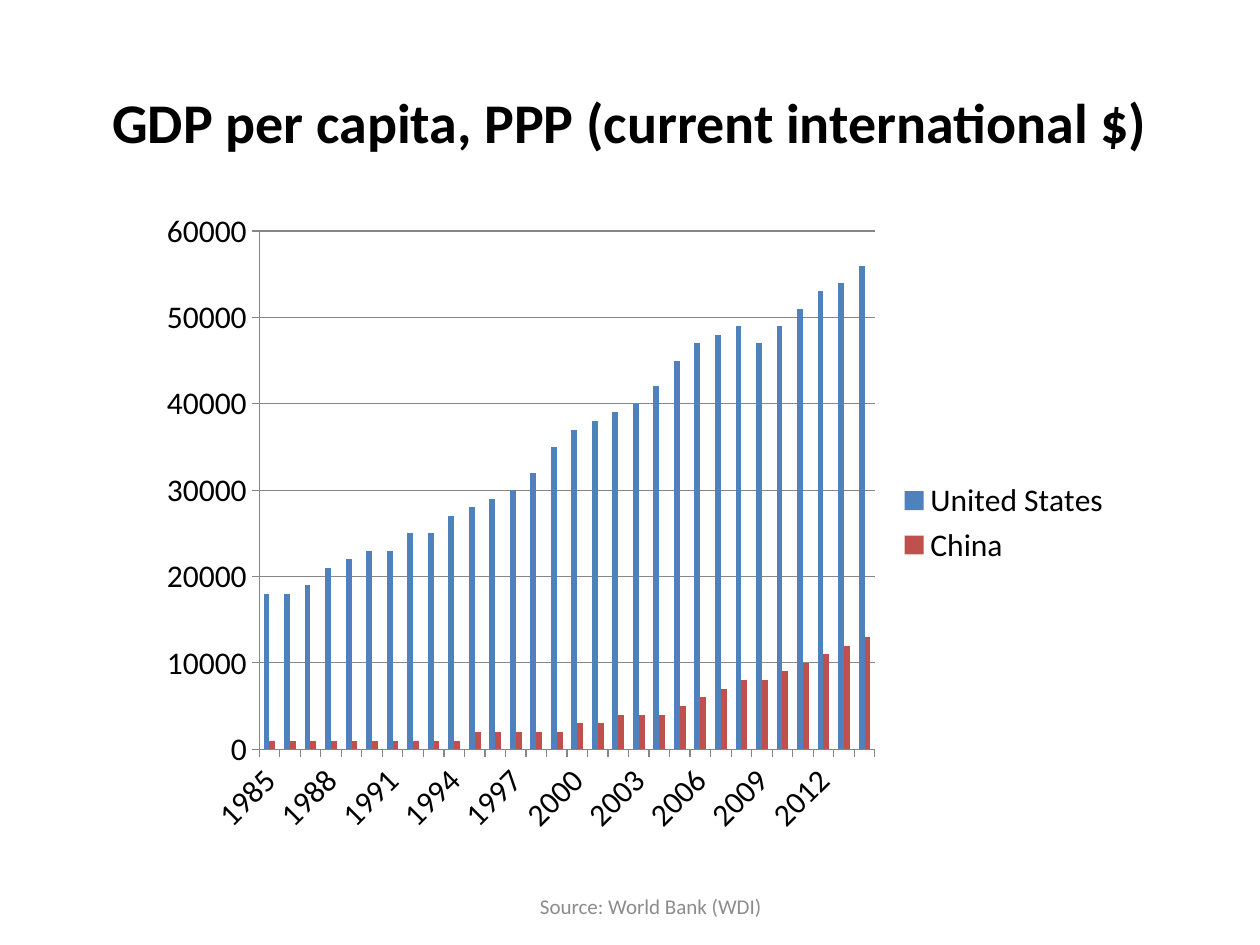
from pptx import Presentation
from pptx.chart.data import CategoryChartData
from pptx.dml.color import RGBColor
from pptx.enum.chart import XL_CHART_TYPE, XL_LEGEND_POSITION, XL_TICK_MARK
from pptx.enum.text import MSO_ANCHOR, PP_ALIGN
from pptx.util import Inches, Pt

COLUMNS = XL_CHART_TYPE.COLUMN_CLUSTERED
LEGEND_RIGHT = XL_LEGEND_POSITION.RIGHT
TICK_OUTSIDE = XL_TICK_MARK.OUTSIDE
CENTER = PP_ALIGN.CENTER
MIDDLE = MSO_ANCHOR.MIDDLE

FONT = "Calibri"
BLACK = "000000"
GRAY = "8C8C8C"
AXIS_GRAY = "868686"

TITLE = "GDP per capita, PPP (current international $)"
SOURCE = "Source: World Bank (WDI)"
YEARS = range(1985, 2015)
# Name, colour, GDP per capita in thousands of dollars
SERIES = [
    ("United States", "4F81BD",
     [18, 18, 19, 21, 22, 23, 23, 25, 25, 27, 28, 29, 30, 32, 35,
      37, 38, 39, 40, 42, 45, 47, 48, 49, 47, 49, 51, 53, 54, 56]),
    ("China", "C0504D",
     [1, 1, 1, 1, 1, 1, 1, 1, 1, 1, 2, 2, 2, 2, 2,
      3, 3, 4, 4, 4, 5, 6, 7, 8, 8, 9, 10, 11, 12, 13]),
]


def color(hex_string):
    return RGBColor.from_string(hex_string)


def set_font(font, size, hex_color, bold=False):
    font.name = FONT
    font.size = Pt(size)
    font.bold = bold
    font.color.rgb = color(hex_color)


def add_text(slide, text, box, *, size, hex_color, bold=False):
    shape = slide.shapes.add_textbox(*map(Inches, box))
    frame = shape.text_frame
    frame.word_wrap = True
    frame.vertical_anchor = MIDDLE
    paragraph = frame.paragraphs[0]
    paragraph.alignment = CENTER
    run = paragraph.add_run()
    run.text = text
    set_font(run.font, size, hex_color, bold)


def style_axis(axis):
    axis.major_tick_mark = TICK_OUTSIDE
    axis.format.line.color.rgb = color(AXIS_GRAY)
    axis.format.line.width = Pt(0.75)


def add_gdp_chart(slide, box):
    data = CategoryChartData(number_format="General")
    data.categories = [str(year) for year in YEARS]
    for name, _, thousands in SERIES:
        data.add_series(name, [value * 1000 for value in thousands])

    chart = slide.shapes.add_chart(COLUMNS, *map(Inches, box), data).chart
    set_font(chart.font, 18, BLACK)
    chart.has_title = False
    chart.has_legend = True
    chart.legend.position = LEGEND_RIGHT
    chart.legend.include_in_layout = False

    plot = chart.plots[0]
    plot.gap_width = 150
    plot.vary_by_categories = False
    for series, (_, hex_color, _) in zip(plot.series, SERIES):
        series.format.fill.solid()
        series.format.fill.fore_color.rgb = color(hex_color)

    style_axis(chart.category_axis)
    value_axis = chart.value_axis
    style_axis(value_axis)
    value_axis.minimum_scale = 0
    value_axis.maximum_scale = 60000
    value_axis.major_unit = 10000
    value_axis.has_major_gridlines = True
    gridline = value_axis.major_gridlines.format.line
    gridline.color.rgb = color(AXIS_GRAY)
    gridline.width = Pt(0.75)


def main():
    presentation = Presentation()
    presentation.slide_width = Inches(10)
    presentation.slide_height = Inches(7.5)
    slide = presentation.slides.add_slide(presentation.slide_layouts[6])
    add_text(slide, TITLE, (0.75, 0.5, 8.5, 0.92),
             size=32, hex_color=BLACK, bold=True)
    add_text(slide, SOURCE, (1.83, 7.02, 6.67, 0.34),
             size=12, hex_color=GRAY)
    add_gdp_chart(slide, (1.17, 1.58, 7.75, 5.14))
    presentation.save("out.pptx")


if __name__ == "__main__":
    main()
